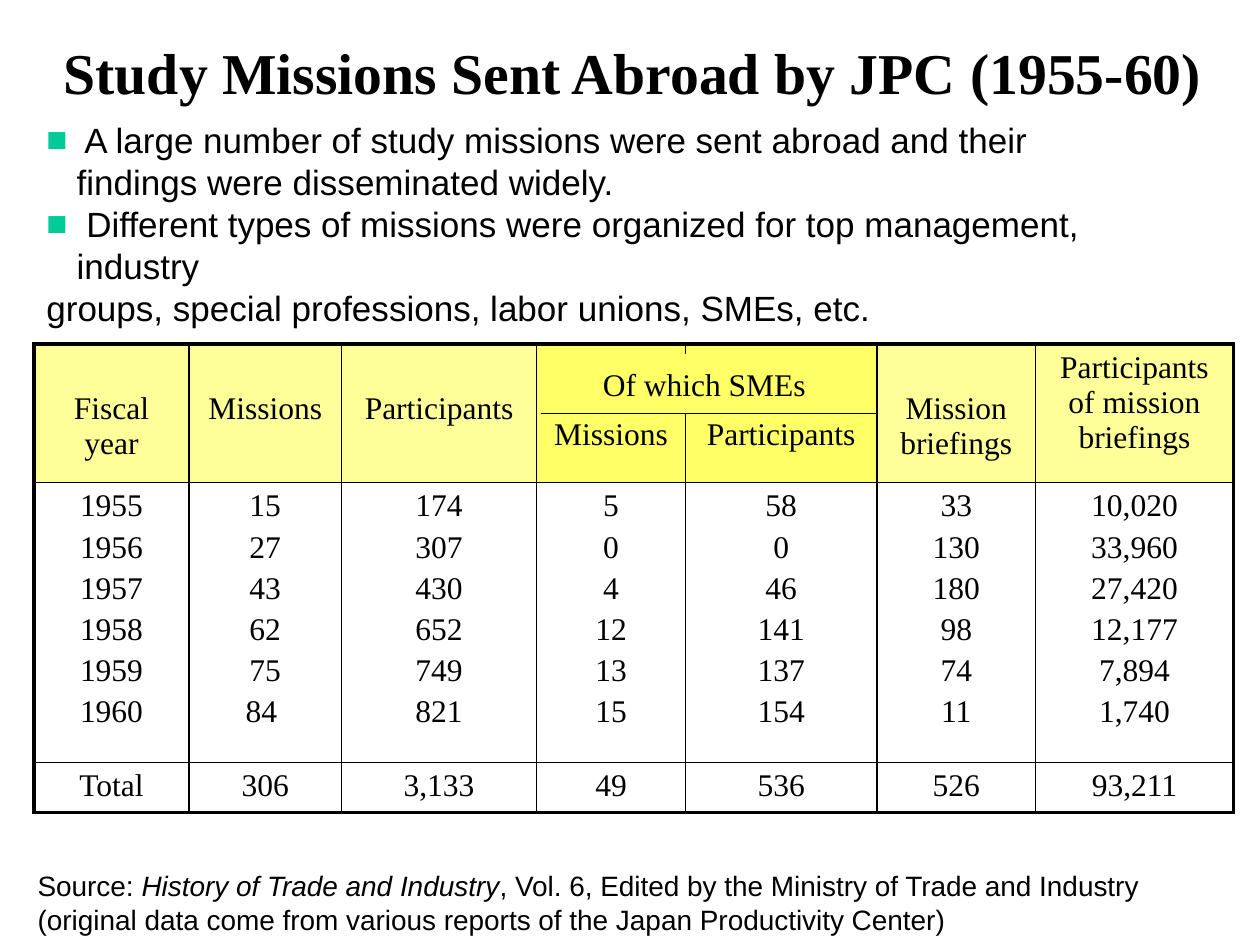
from lxml.etree import SubElement
from pptx import Presentation
from pptx.dml.color import RGBColor
from pptx.enum.shapes import MSO_CONNECTOR, MSO_SHAPE
from pptx.enum.text import MSO_ANCHOR, PP_ALIGN
from pptx.oxml.ns import qn
from pptx.util import Inches, Pt

COLORS = {"ink": "000000", "header": "FFFF99", "sme": "FFFF66", "bullet": "00CC99"}
SERIF, SANS = "Times New Roman", "Arial"
TABLE_LEFT, TABLE_TOP = 0.27, 2.73
COLUMN_WIDTHS = [1.23, 1.21, 1.55, 1.18, 1.52, 1.26, 1.57]
ROW_HEIGHTS = [1.1, 2.22, 0.4]
SME_COLUMNS = (3, 4)

# Heading, space above it in inches, yearly values, total
COLUMNS = [
    ("Fiscal year", 0.38, ["1955", "1956", "1957", "1958", "1959", "1960"], "Total"),
    ("Missions", 0.38, ["15", "27", "43", "62", "75", "84 "], "306"),
    ("Participants", 0.38, ["174", "307", "430", "652", "749", "821"], "3,133"),
    ("Missions", 0.58, ["5", "0", "4", "12", "13", "15"], "49"),
    ("Participants", 0.58, ["58", "0", "46", "141", "137", "154"], "536"),
    ("Mission briefings", 0.38, ["33", "130", "180", "98", "74", "11"], "526"),
    ("Participants of mission briefings", 0.05,
     ["10,020", "33,960", "27,420", "12,177", "7,894", "1,740"], "93,211"),
]


def format_text(frame, font, size, align=PP_ALIGN.LEFT, bold=False):
    for para in frame.paragraphs:
        para.alignment = align
        for span in para.runs:
            span.font.name, span.font.size, span.font.bold = font, Pt(size), bold
            span.font.color.rgb = RGBColor.from_string(COLORS["ink"])


def add_border(cell, side, width):
    """Draw one side (L, R, T or B) of a cell; call before filling the cell."""
    line = SubElement(cell._tc.get_or_add_tcPr(), qn(f"a:ln{side}"), w=str(Pt(width)))
    fill = SubElement(line, qn("a:solidFill"))
    SubElement(fill, qn("a:srgbClr"), val=COLORS["ink"])


deck = Presentation()
deck.slide_width, deck.slide_height = Inches(10), Inches(7.5)
page = deck.slides.add_slide(deck.slide_layouts[5])

# Title
title = page.shapes.title
title.left, title.top = Inches(0.27), Inches(0.21)
title.width, title.height = Inches(9.5), Inches(0.71)
title.text_frame.text = "Study Missions Sent Abroad by JPC (1955-60)"
title.text_frame.vertical_anchor = MSO_ANCHOR.MIDDLE
format_text(title.text_frame, SERIF, 33, PP_ALIGN.CENTER, bold=True)

# Table
table = page.shapes.add_table(
    len(ROW_HEIGHTS), len(COLUMNS), Inches(TABLE_LEFT), Inches(TABLE_TOP),
    Inches(sum(COLUMN_WIDTHS)), Inches(sum(ROW_HEIGHTS))).table
table.first_row = table.horz_banding = False
for row, height in zip(table.rows, ROW_HEIGHTS):
    row.height = Inches(height)
last_row, last_column = len(ROW_HEIGHTS) - 1, len(COLUMNS) - 1

for c, (heading, space_above, values, total) in enumerate(COLUMNS):
    table.columns[c].width = Inches(COLUMN_WIDTHS[c])
    for r, text in enumerate([heading, "\n".join(values), total]):
        cell = table.cell(r, c)
        cell.text_frame.text = text
        cell.margin_top = Inches(space_above if r == 0 else 0.05)
        format_text(cell.text_frame, SERIF, 18, PP_ALIGN.CENTER)
        for para in cell.text_frame.paragraphs:
            para.space_before = Pt(3.6)
        outer_sides = {"L": c == 0, "R": c == last_column, "T": r == 0, "B": r == last_row}
        for side, is_outer in outer_sides.items():
            add_border(cell, side, 2.25 if is_outer else 1)
        if r == 0:
            cell.fill.solid()
            shade = "sme" if c in SME_COLUMNS else "header"
            cell.fill.fore_color.rgb = RGBColor.from_string(COLORS[shade])
        else:
            cell.fill.background()

# Heading shared by the two SME columns
sme_left, sme_bottom = 4.29, 3.28
sme = page.shapes.add_shape(
    MSO_SHAPE.RECTANGLE, Inches(sme_left), Inches(2.81), Inches(2.6), Inches(0.47))
sme.shadow.inherit = False
sme.fill.solid()
sme.fill.fore_color.rgb = RGBColor.from_string(COLORS["sme"])
sme.line.fill.background()
sme.text_frame.text = "Of which SMEs"
sme.text_frame.word_wrap = False
sme.text_frame.vertical_anchor = MSO_ANCHOR.MIDDLE
format_text(sme.text_frame, SERIF, 18, PP_ALIGN.CENTER)

# Source note
source = page.shapes.add_textbox(Inches(0.2), Inches(6.82), Inches(9.53), Inches(0.68)).text_frame
source.word_wrap = False
source.vertical_anchor = MSO_ANCHOR.MIDDLE
para = source.paragraphs[0]
for text in ["Source: ", "History of Trade and Industry",
             ", Vol. 6, Edited by the Ministry of Trade and Industry"]:
    para.add_run().text = text
para.runs[1].font.italic = True
source.add_paragraph().text = (
    "(original data come from various reports of the Japan Productivity Center)")
format_text(source, SANS, 16)

# Key points
points = page.shapes.add_textbox(Inches(0.27), Inches(0.99), Inches(9.37), Inches(1.57)).text_frame
points.word_wrap = False
points.vertical_anchor = MSO_ANCHOR.MIDDLE
points.text = (
    " A large number of study missions were sent abroad and their\v"
    "findings were disseminated widely.\n"
    " Different types of missions were organized for top management, industry\n"
    "groups, special professions, labor unions, SMEs, etc.")
format_text(points, SANS, 20)
for para in points.paragraphs[:2]:
    properties = para._p.get_or_add_pPr()
    properties.set("marL", str(Inches(0.24)))
    properties.set("indent", str(Inches(-0.24)))
    bullet_color = SubElement(properties, qn("a:buClr"))
    SubElement(bullet_color, qn("a:srgbClr"), val=COLORS["bullet"])
    SubElement(properties, qn("a:buFont"), typeface=SANS)
    SubElement(properties, qn("a:buChar"), char="■")

# Rule under the SME heading
rule = page.shapes.add_connector(
    MSO_CONNECTOR.STRAIGHT, Inches(sme_left), Inches(sme_bottom), Inches(6.97), Inches(sme_bottom))
rule.line.color.rgb = RGBColor.from_string(COLORS["ink"])
rule.line.width = Pt(0.75)
SubElement(rule._element.spPr, qn("a:effectLst"))

deck.save("out.pptx")
